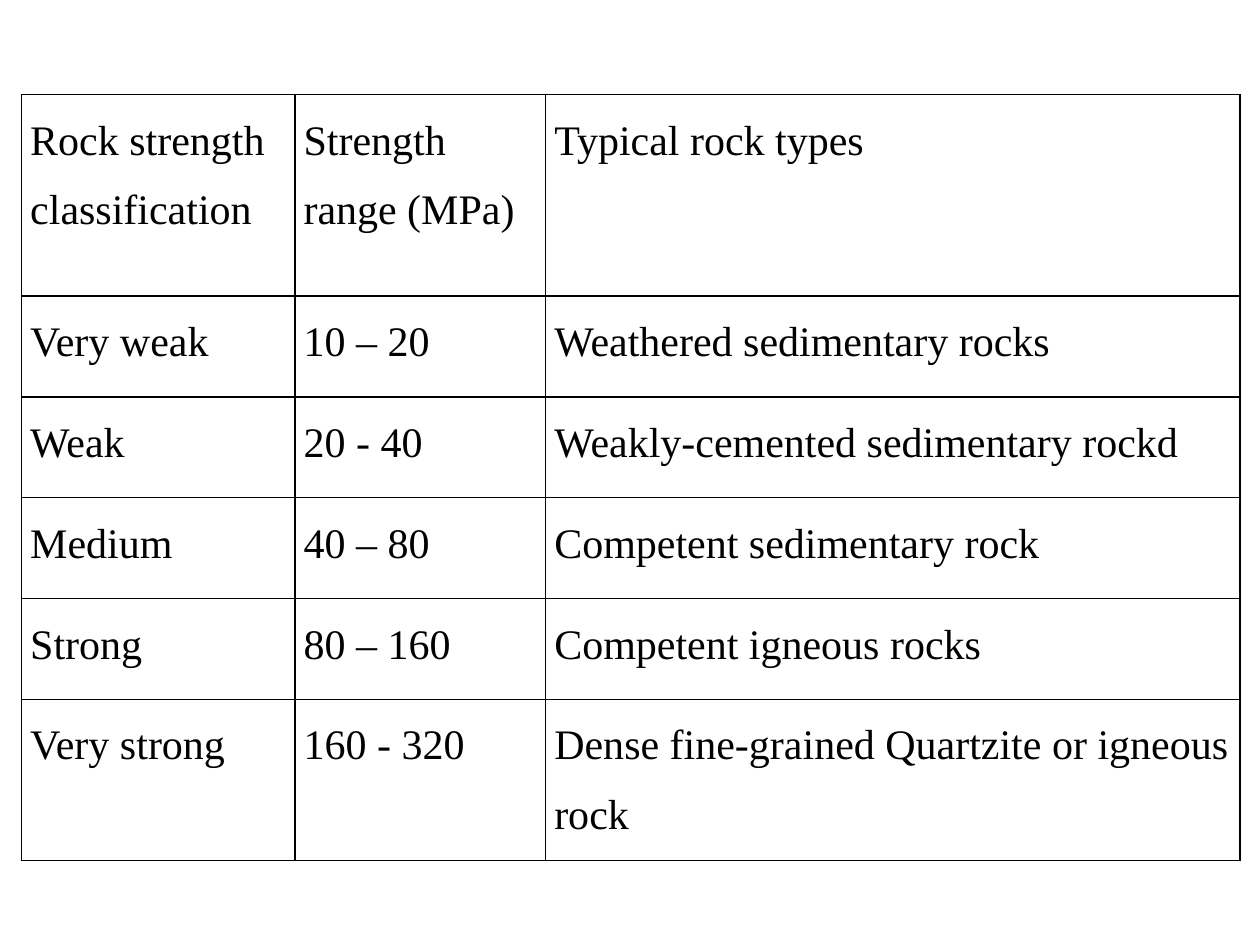
from typing import NamedTuple

from lxml.etree import SubElement
from pptx import Presentation
from pptx.dml.color import RGBColor
from pptx.oxml.ns import qn
from pptx.util import Inches, Pt

BLACK = RGBColor(0, 0, 0)
FONT_NAME = "Times New Roman"
COLUMN_WIDTHS = (2.17, 1.99, 5.51)
ROW_HEIGHTS = (1.6, 0.8, 0.8, 0.8, 0.8, 1.28)


class RockClass(NamedTuple):
    classification: str
    strength_range: str
    rock_types: str


ROWS = (
    RockClass("Rock strength classification", "Strength range (MPa)", "Typical rock types"),
    RockClass("Very weak", "10 – 20", "Weathered sedimentary rocks"),
    RockClass("Weak", "20 - 40", "Weakly-cemented sedimentary rockd"),
    RockClass("Medium", "40 – 80", "Competent sedimentary rock"),
    RockClass("Strong", "80 – 160", "Competent igneous rocks"),
    RockClass("Very strong", "160 - 320", "Dense fine-grained Quartzite or igneous rock"),
)


def set_borders(cell, color: RGBColor, width: float) -> None:
    """Draw all four sides; the lines must come before the cell's fill."""
    properties = cell._tc.get_or_add_tcPr()
    for side in ("a:lnL", "a:lnR", "a:lnT", "a:lnB"):
        line = SubElement(properties, qn(side), w=str(Pt(width)))
        fill = SubElement(line, qn("a:solidFill"))
        SubElement(fill, qn("a:srgbClr"), val=str(color))


def write_text(cell, text: str, *, size: float, color: RGBColor, line_spacing: float) -> None:
    cell.margin_left = cell.margin_right = Inches(0.07)
    cell.margin_top = cell.margin_bottom = 0
    paragraph = cell.text_frame.paragraphs[0]
    paragraph.line_spacing = line_spacing
    run = paragraph.add_run()
    run.text = text
    run.font.name = FONT_NAME
    run.font.size = Pt(size)
    run.font.bold = False
    run.font.color.rgb = color


def add_strength_table(slide, rows: tuple[RockClass, ...]) -> None:
    table = slide.shapes.add_table(
        len(rows), len(COLUMN_WIDTHS), Inches(0.17), Inches(0.75),
        Inches(sum(COLUMN_WIDTHS)), Inches(sum(ROW_HEIGHTS)),
    ).table
    table.first_row = table.horz_banding = False
    for column, width in zip(table.columns, COLUMN_WIDTHS):
        column.width = Inches(width)
    for row, height, values in zip(table.rows, ROW_HEIGHTS, rows):
        row.height = Inches(height)
        for cell, text in zip(row.cells, values):
            set_borders(cell, BLACK, 1)
            cell.fill.background()
            write_text(cell, text, size=24, color=BLACK, line_spacing=1.5)


def main() -> None:
    presentation = Presentation()
    presentation.slide_width = Inches(10)
    presentation.slide_height = Inches(7.5)
    blank_layout = presentation.slide_layouts[6]
    slide = presentation.slides.add_slide(blank_layout)
    add_strength_table(slide, ROWS)
    presentation.save("out.pptx")


if __name__ == "__main__":
    main()
